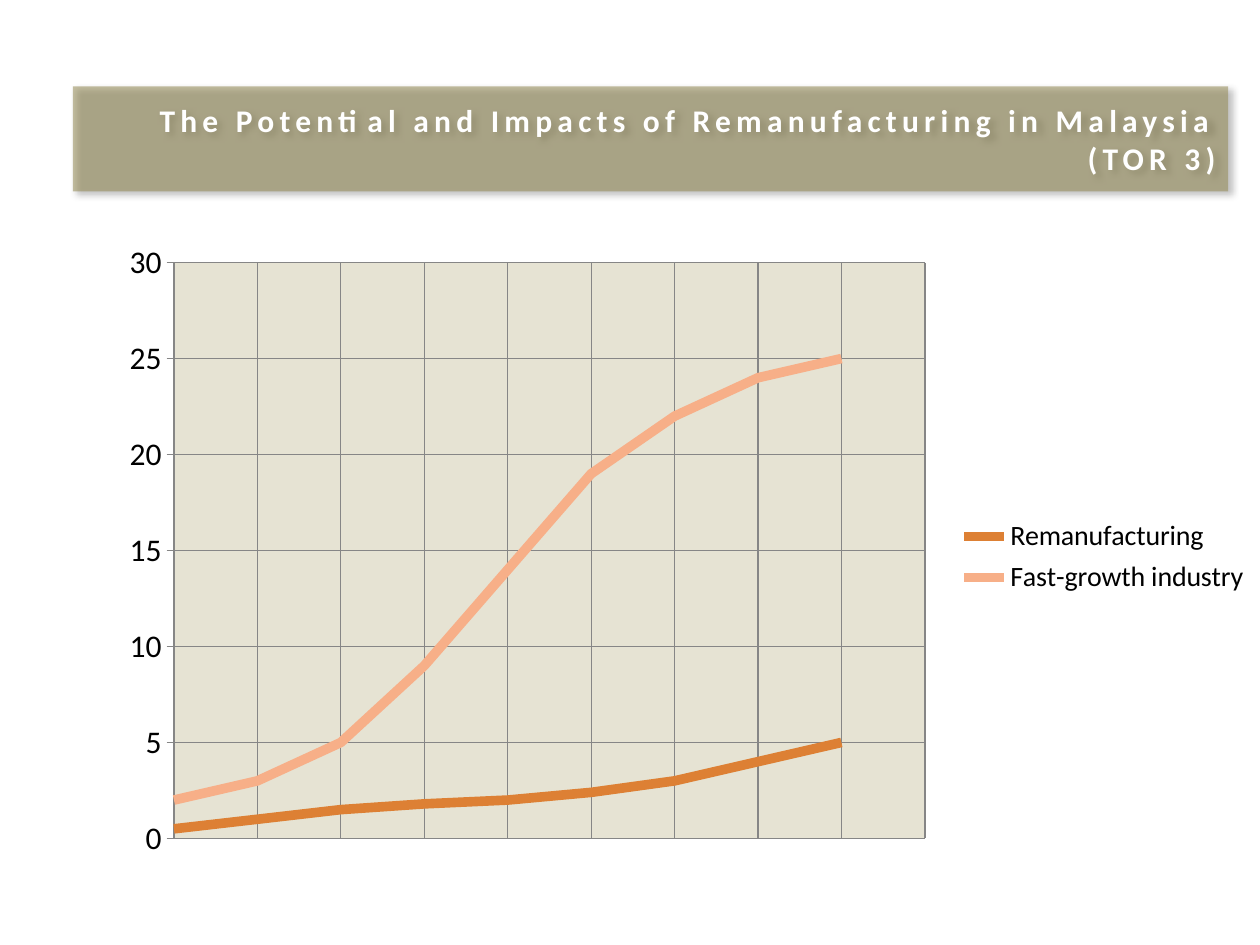
"""Build a slide comparing the growth of remanufacturing with a fast-growth industry."""
import pptx
import pptx.chart.data
import pptx.dml.color
import pptx.enum.chart
import pptx.enum.text
import pptx.oxml
import pptx.oxml.ns
import pptx.util
from pptx.util import Cm

RGBColor = pptx.dml.color.RGBColor
WHITE = RGBColor(0xFF, 0xFF, 0xFF)
BLACK = RGBColor(0x00, 0x00, 0x00)
OLIVE = RGBColor(0x94, 0x8A, 0x54)
TAN = RGBColor(0xDD, 0xD9, 0xC3)
GRAY = RGBColor(0x86, 0x86, 0x86)
ORANGE = RGBColor(0xDD, 0x80, 0x34)
PEACH = RGBColor(0xF7, 0xAF, 0x88)
FONT = "Calibri"
SERIES = [
    ("Remanufacturing", ORANGE, [0.5, 1, 1.5, 1.8, 2, 2.4, 3, 4, 5]),
    ("Fast-growth industry", PEACH, [2, 3, 5, 9, 14, 19, 22, 24, 25]),
]


def xml_element(markup):
    tag_end = min(markup.index(mark) for mark in " >" if mark in markup)
    namespaces = " " + pptx.oxml.ns.nsdecls("a", "c")
    return pptx.oxml.parse_xml(markup[:tag_end] + namespaces + markup[tag_end:])


def place(parent, position, target, left, top, width, height):
    for layout in parent.findall(pptx.oxml.ns.qn("c:layout")):
        parent.remove(layout)
    sizes = {"x": left, "y": top, "w": width, "h": height}
    parts = "".join(f'<c:{key} val="{value}"/>' for key, value in sizes.items())
    parent.insert(position, xml_element(
        f'<c:layout ><c:manualLayout>{target}<c:xMode val="edge"/><c:yMode val="edge"/>'
        f"{parts}</c:manualLayout></c:layout>"))


deck = pptx.Presentation()
deck.slide_width, deck.slide_height = Cm(25.4), Cm(19.05)
page = deck.slides.add_slide(deck.slide_layouts[5])

title = page.shapes.title
title.left, title.top, title.width, title.height = Cm(1.47), Cm(1.9), Cm(23.29), Cm(1.8)
title.fill.solid()
title.fill.fore_color.rgb = OLIVE
title_properties = title._element.spPr
title_properties.xpath("a:solidFill/a:srgbClr")[0].append(xml_element('<a:alpha val="55000"/>'))
title_properties.append(xml_element(
    '<a:effectLst ><a:outerShdw blurRad="50800" dist="38100" dir="2700000" algn="tl">'
    '<a:srgbClr val="000000"><a:alpha val="43000"/></a:srgbClr></a:outerShdw></a:effectLst>'))
frame = title.text_frame
frame.text = "The Potential and Impacts of Remanufacturing in Malaysia (TOR 3)"
frame.word_wrap = True
frame.auto_size = pptx.enum.text.MSO_AUTO_SIZE.SHAPE_TO_FIT_TEXT
para = frame.paragraphs[0]
para.alignment = pptx.enum.text.PP_ALIGN.RIGHT
span = para.runs[0]
span.font.name = FONT
span.font.size = pptx.util.Pt(18)
span.font.bold = True
span.font.color.rgb = WHITE
span.font._element.set("spc", "300")

data = pptx.chart.data.XyChartData()
for name, color, values in SERIES:
    series = data.add_series(name)
    for x, y in enumerate(values):
        series.add_data_point(x, y)
chart = page.shapes.add_chart(
    pptx.enum.chart.XL_CHART_TYPE.XY_SCATTER_SMOOTH_NO_MARKERS,
    Cm(2.11), Cm(4.65), Cm(23.29), Cm(12.9), data).chart
chart.has_title = False
chart.font.name = FONT
chart.font.size = pptx.util.Pt(18)
chart.font.color.rgb = BLACK

for series, (name, color, values) in zip(chart.plots[0].series, SERIES):
    series.smooth = True
    series.format.line.color.rgb = color
    series.format.line.width = pptx.util.Pt(5.5)

for axis, maximum, step in [(chart.category_axis, 9, 1), (chart.value_axis, 30, 5)]:
    axis.minimum_scale, axis.maximum_scale, axis.major_unit = 0, maximum, step
    axis.has_major_gridlines = True
    axis.major_tick_mark = pptx.enum.chart.XL_TICK_MARK.CROSS
    for line in (axis.format.line, axis.major_gridlines.format.line):
        line.color.rgb = GRAY
        line.width = pptx.util.Pt(0.75)
chart.category_axis.visible = False
chart.value_axis.tick_labels.number_format = "General"
chart.value_axis.tick_labels.number_format_is_linked = False

chart.has_legend = True
legend = chart.legend
legend.position = pptx.enum.chart.XL_LEGEND_POSITION.RIGHT
legend.include_in_layout = False
legend.font.name = FONT
legend.font.size = pptx.util.Pt(16)
legend.font.color.rgb = BLACK
place(legend._element, 1, "", 0.73, 0.44, 0.27, 0.14)

plot_area = chart._chartSpace.chart.plotArea
place(plot_area, 0, '<c:layoutTarget val="inner"/>', 0.06, 0.05, 0.65, 0.9)
plot_area.append(xml_element(
    f'<c:spPr ><a:solidFill><a:srgbClr val="{TAN}"><a:alpha val="73000"/></a:srgbClr>'
    "</a:solidFill></c:spPr>"))

deck.save("out.pptx")
